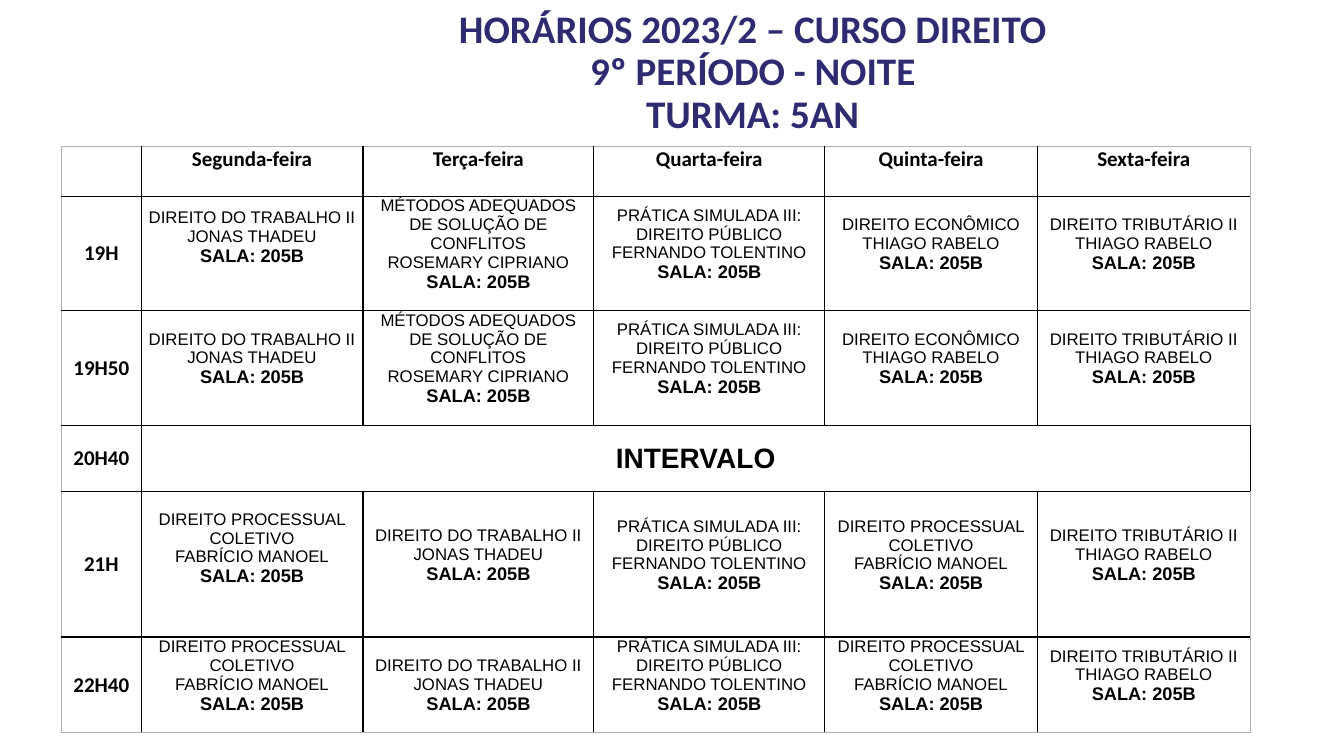
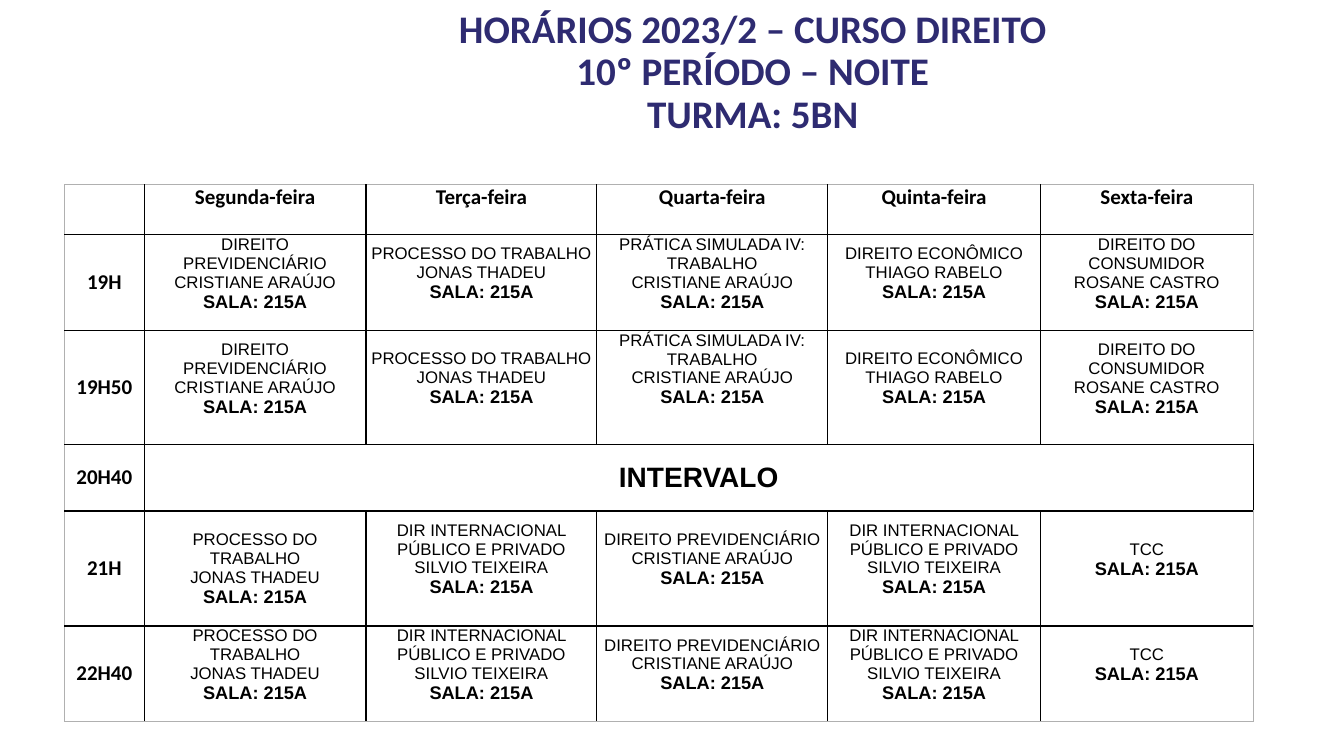
"""Build the evening timetables of two law classes as one table per slide."""
import lxml.etree
import pptx
import pptx.dml.color
import pptx.enum.text
import pptx.oxml.ns
import pptx.util

IN = pptx.util.Inches
WIDTH, HEIGHT = IN(13.33), IN(7.5)
COLORS = {"title": "2E2B71", "ink": "000000", "edge": "B0B0B0", "paper": "FFFFFF"}
STYLES = {
    "title": {"name": "Calibri", "size": 27.9, "bold": True, "color": "title"},
    "label": {"name": "Calibri", "size": 15, "bold": True, "color": "ink"},
    "class": {"name": "Arial", "size": 12, "bold": False, "color": "ink"},
    "room": {"name": "Arial", "size": 13, "bold": True, "color": "ink"},
    "break": {"name": "Arial", "size": 20, "bold": True, "color": "ink"},
}
COLUMNS = [0.79, 2.2, 2.29, 2.29, 2.11, 2.11]
DAYS = ["Segunda-feira", "Terça-feira", "Quarta-feira", "Quinta-feira", "Sexta-feira"]
TIMES = ["19H", "19H50", "20H40", "21H", "22H40"]
BREAK_ROW = 3
PAD = 0.18
TOP, MIDDLE = pptx.enum.text.MSO_ANCHOR.TOP, pptx.enum.text.MSO_ANCHOR.MIDDLE

LABOUR = ["DIREITO DO TRABALHO II", "JONAS THADEU"]
METHODS = ["MÉTODOS ADEQUADOS DE SOLUÇÃO DE CONFLITOS", "ROSEMARY CIPRIANO"]
PUBLIC = ["PRÁTICA SIMULADA III: DIREITO PÚBLICO", "FERNANDO TOLENTINO"]
ECONOMIC = ["DIREITO ECONÔMICO", "THIAGO RABELO"]
TAX = ["DIREITO TRIBUTÁRIO II", "THIAGO RABELO"]
COLLECTIVE = ["DIREITO PROCESSUAL COLETIVO", "FABRÍCIO MANOEL"]
PENSIONS = ["DIREITO PREVIDENCIÁRIO", "CRISTIANE ARAÚJO"]
PROCEDURE = ["PROCESSO DO TRABALHO", "JONAS THADEU"]
PRACTICE = ["PRÁTICA SIMULADA IV: TRABALHO", "CRISTIANE ARAÚJO"]
CONSUMER = ["DIREITO DO CONSUMIDOR", "ROSANE CASTRO"]
WORLD = ["DIR INTERNACIONAL PÚBLICO E PRIVADO", "SILVIO TEIXEIRA"]
THESIS = ["TCC"]

EARLY_A = [LABOUR, METHODS, PUBLIC, ECONOMIC, TAX]
LATE_A = [COLLECTIVE, LABOUR, PUBLIC, COLLECTIVE, TAX]
EARLY_B = [PENSIONS, PROCEDURE, PRACTICE, ECONOMIC, CONSUMER]
LATE_B = [PROCEDURE, WORLD, PENSIONS, WORLD, THESIS]
TIMETABLES = [
    {"period": "9º PERÍODO - NOITE", "group": "TURMA: 5AN", "room": "SALA: 205B",
     "corner": (0.61, 1.45), "rows": [0.5, 1.13, 1.14, 0.66, 1.44, 0.95],
     "early": EARLY_A, "late": LATE_A,
     "pads": {(1, 1): 0.32, (4, 1): 0.32, (5, 2): 0}},
    {"period": "10º PERÍODO – NOITE", "group": "TURMA: 5BN", "room": "SALA: 215A",
     "corner": (0.64, 1.83), "rows": [0.5, 0.95, 1.13, 0.66, 1.14, 0.95],
     "early": EARLY_B, "late": LATE_B,
     "pads": {(2, 3): 0.36, (4, 1): 0}},
]


def rgb(name):
    """Return a named colour."""
    return pptx.dml.color.RGBColor.from_string(COLORS[name])


def write(tf, lines, **paragraph):
    """Write (text, style) lines as centred paragraphs."""
    for i, (text, style) in enumerate(lines):
        p = tf.paragraphs[0] if i == 0 else tf.add_paragraph()
        p.alignment = pptx.enum.text.PP_ALIGN.CENTER
        for key, value in paragraph.items():
            setattr(p, key, value)
        r = p.add_run()
        r.text = text
        for key, value in STYLES[style].items():
            if key == "color":
                r.font.color.rgb = rgb(value)
            else:
                setattr(r.font, key, pptx.util.Pt(value) if key == "size" else value)


def add_title(s, lines):
    """Place the slide's title and write its lines."""
    sp = s.shapes.title
    box = {"left": 0.25 * WIDTH, "top": 0.03 * HEIGHT,
           "width": 0.62 * WIDTH, "height": 0.19 * HEIGHT}
    for key, value in box.items():
        setattr(sp, key, int(value))
    tf = sp.text_frame
    frame = {"auto_size": pptx.enum.text.MSO_AUTO_SIZE.NONE, "word_wrap": True,
             "vertical_anchor": MIDDLE, "margin_top": IN(0.05), "margin_bottom": IN(0.47)}
    for key, value in frame.items():
        setattr(tf, key, value)
    write(tf, [(line, "title") for line in lines], line_spacing=0.9,
          space_before=pptx.util.Pt(0))


def set_borders(cell, outer):
    """Rule a cell in ink, and in a thin grey on the outer sides."""
    tc_pr = cell._tc.get_or_add_tcPr()
    qn = pptx.oxml.ns.qn
    for i, side in enumerate(("L", "R", "T", "B")):
        width, color = (0.5, "edge") if side in outer else (1, "ink")
        ln = lxml.etree.Element(qn(f"a:ln{side}"), w=str(pptx.util.Pt(width)))
        fill = lxml.etree.SubElement(ln, qn("a:solidFill"))
        lxml.etree.SubElement(fill, qn("a:srgbClr"), val=COLORS[color])
        tc_pr.insert(i, ln)


def format_cell(cell, row, col, pad):
    """Set a cell's fill, margins, anchor and borders."""
    cell.fill.solid()
    cell.fill.fore_color.rgb = rgb("paper")
    layout = {"margin_left": IN(0.05), "margin_right": IN(0.05), "margin_top": 0,
              "margin_bottom": IN(pad), "vertical_anchor": MIDDLE if row else TOP}
    for key, value in layout.items():
        setattr(cell, key, value)
    edges = {"L": col == 0, "R": col == len(DAYS), "T": row == 0, "B": row == len(TIMES)}
    set_borders(cell, [side for side, is_outer in edges.items() if is_outer])


def cell_lines(plan, row, col):
    """Return the styled lines of one cell."""
    if row == 0:
        return [(DAYS[col - 1], "label")] if col else []
    if col == 0:
        return [(TIMES[row - 1], "label")]
    if row == BREAK_ROW:
        return [("INTERVALO", "break")] if col == 1 else []
    lessons = plan["early"] if row < BREAK_ROW else plan["late"]
    return [(line, "class") for line in lessons[col - 1]] + [(plan["room"], "room")]


def add_timetable(s, plan):
    """Add the week's table with its merged break row."""
    x, y = plan["corner"]
    rows = plan["rows"]
    table = s.shapes.add_table(len(rows), len(COLUMNS), IN(x), IN(y),
                               IN(sum(COLUMNS)), IN(sum(rows))).table
    for column, width in zip(table.columns, COLUMNS):
        column.width = IN(width)
    for row, height in enumerate(rows):
        table.rows[row].height = IN(height)
        for col in range(len(COLUMNS)):
            cell = table.cell(row, col)
            is_lesson = row not in (0, BREAK_ROW) and col
            pad = plan["pads"].get((row, col), PAD) if is_lesson else 0
            format_cell(cell, row, col, pad)
            write(cell.text_frame, cell_lines(plan, row, col))
    table.cell(BREAK_ROW, 1).merge(table.cell(BREAK_ROW, len(DAYS)))


def main():
    """Build and save the presentation."""
    prs = pptx.Presentation()
    prs.slide_width, prs.slide_height = WIDTH, HEIGHT
    for plan in TIMETABLES:
        s = prs.slides.add_slide(prs.slide_layouts[5])
        add_title(s, ["HORÁRIOS 2023/2 – CURSO DIREITO", plan["period"], plan["group"]])
        add_timetable(s, plan)
    prs.save("out.pptx")


if __name__ == "__main__":
    main()
